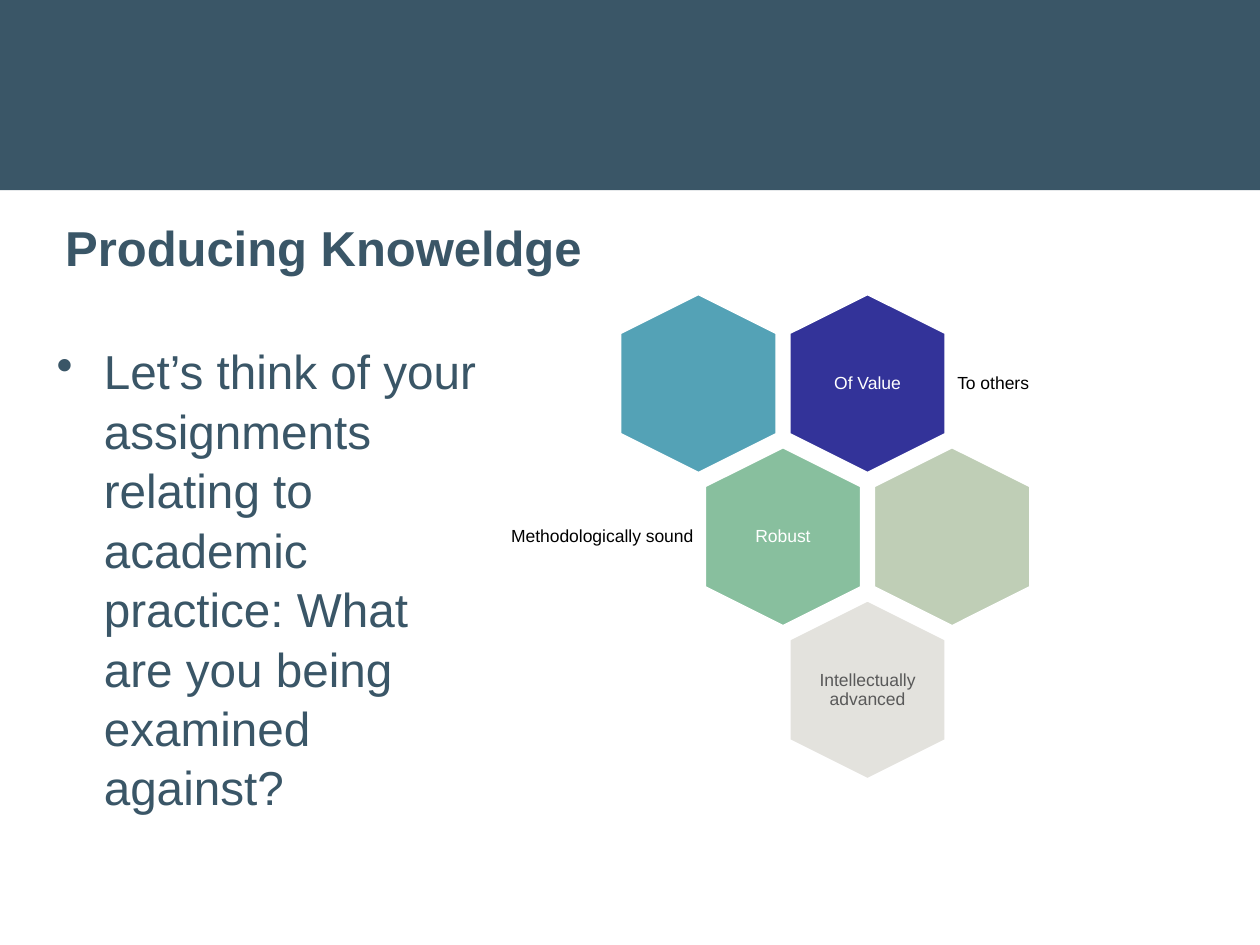
from pptx import Presentation
from pptx.dml.color import RGBColor as Rgb
from pptx.enum.shapes import MSO_SHAPE as Kind
from pptx.enum.text import MSO_ANCHOR as Anchor, PP_ALIGN as Align
from pptx.oxml import parse_xml
from pptx.oxml.ns import nsdecls
from pptx.util import Pt

THEME = {
    "font": "Arial", "slate": "3A5667", "white": "FFFFFF", "black": "000000",
    "gray": "595959", "blue": "333399", "teal": "54A2B6", "green": "88BF9E",
    "sage": "BFCEB6", "stone": "E3E2DD",
    "title": 28, "body": 27.2, "label": 10,
}

TITLE = "Producing Knoweldge"
BODY = ("Let’s think of your assignments relating to academic practice: "
        "What are you being examined against?")
CELLS = [
    {"row": 0, "col": 2, "fill": "blue", "text": "Of Value", "ink": "white",
     "note": "To others", "side": 1},
    {"row": 0, "col": 0, "fill": "teal"},
    {"row": 1, "col": 1, "fill": "green", "text": "Robust", "ink": "white",
     "note": "Methodologically sound", "side": -1},
    {"row": 1, "col": 3, "fill": "sage"},
    {"row": 2, "col": 2, "fill": "stone", "text": "Intellectually advanced",
     "ink": "gray"},
]

LEFT, TOP = 399.1, 219.2
HALF, ROW = 48.3, 87.5
HEX_W, HEX_H = 103, 90
TEXT_W, TEXT_H = 62, 71
NOTE_W, NOTE_H = 115, 62


def tint(name):
    return Rgb.from_string(THEME[name])


def assign(item, values):
    for name, value in values.items():
        setattr(item, name, value)


def shape(slide, kind, area, fill):
    item = slide.shapes.add_shape(kind, *map(Pt, area))
    item.shadow.inherit = False
    item.fill.solid()
    item.fill.fore_color.rgb = tint(fill)
    item.line.fill.background()
    return item


def write(slide, area, text, size, ink, bold=False, pad=None, bullet=None,
          anchor=Anchor.MIDDLE, **form):
    frame = slide.shapes.add_textbox(*map(Pt, area)).text_frame
    assign(frame, {"word_wrap": True, "vertical_anchor": anchor})
    if pad is not None:
        sides = ("left", "right", "top", "bottom")
        assign(frame, {f"margin_{side}": Pt(pad) for side in sides})
    para = frame.paragraphs[0]
    para.text = text
    assign(para, form)
    if bullet:
        props = para._p.get_or_add_pPr()
        props.set("marL", str(Pt(27)))
        props.set("indent", str(Pt(-27)))
        props.append(parse_xml(f'<a:buChar {nsdecls("a")} char="{bullet}"/>'))
    font = para.runs[0].font
    assign(font, {"name": THEME["font"], "size": Pt(THEME[size]), "bold": bold})
    font.color.rgb = tint(ink)


def label(slide, area, text, ink, align):
    write(slide, area, text, "label", ink, pad=3, alignment=align,
          line_spacing=0.9)


def draw(slide, cell):
    x = LEFT + cell["col"] * HALF
    y = TOP + cell["row"] * ROW
    area = (x - HEX_W / 2, y - HEX_H / 2, HEX_W, HEX_H)
    item = shape(slide, Kind.HEXAGON, area, cell["fill"])
    item.rotation = 90
    item.adjustments[0] = 0.25
    item.line.color.rgb = tint("white")
    item.line.width = Pt(2)
    if "text" in cell:
        area = (x - TEXT_W / 2, y - TEXT_H / 2, TEXT_W, TEXT_H)
        label(slide, area, cell["text"], cell["ink"], Align.CENTER)
    if "note" in cell:
        right = cell["side"] > 0
        start = x + HALF if right else x - HALF - NOTE_W
        area = (start, y - NOTE_H / 2, NOTE_W, NOTE_H)
        label(slide, area, cell["note"], "black",
              Align.LEFT if right else Align.RIGHT)


def main():
    deck = Presentation()
    assign(deck, {"slide_width": Pt(720), "slide_height": Pt(540)})
    slide = deck.slides.add_slide(deck.slide_layouts[6])
    shape(slide, Kind.RECTANGLE, (0, 0, 720, 108.7), "slate")
    write(slide, (30.2, 113.8, 660, 54), TITLE, "title", "slate", bold=True)
    write(slide, (25.2, 190.8, 256, 238), BODY, "body", "slate", bullet="•",
          anchor=Anchor.TOP, line_spacing=1.04)
    for cell in CELLS:
        draw(slide, cell)
    deck.save("out.pptx")


if __name__ == "__main__":
    main()
